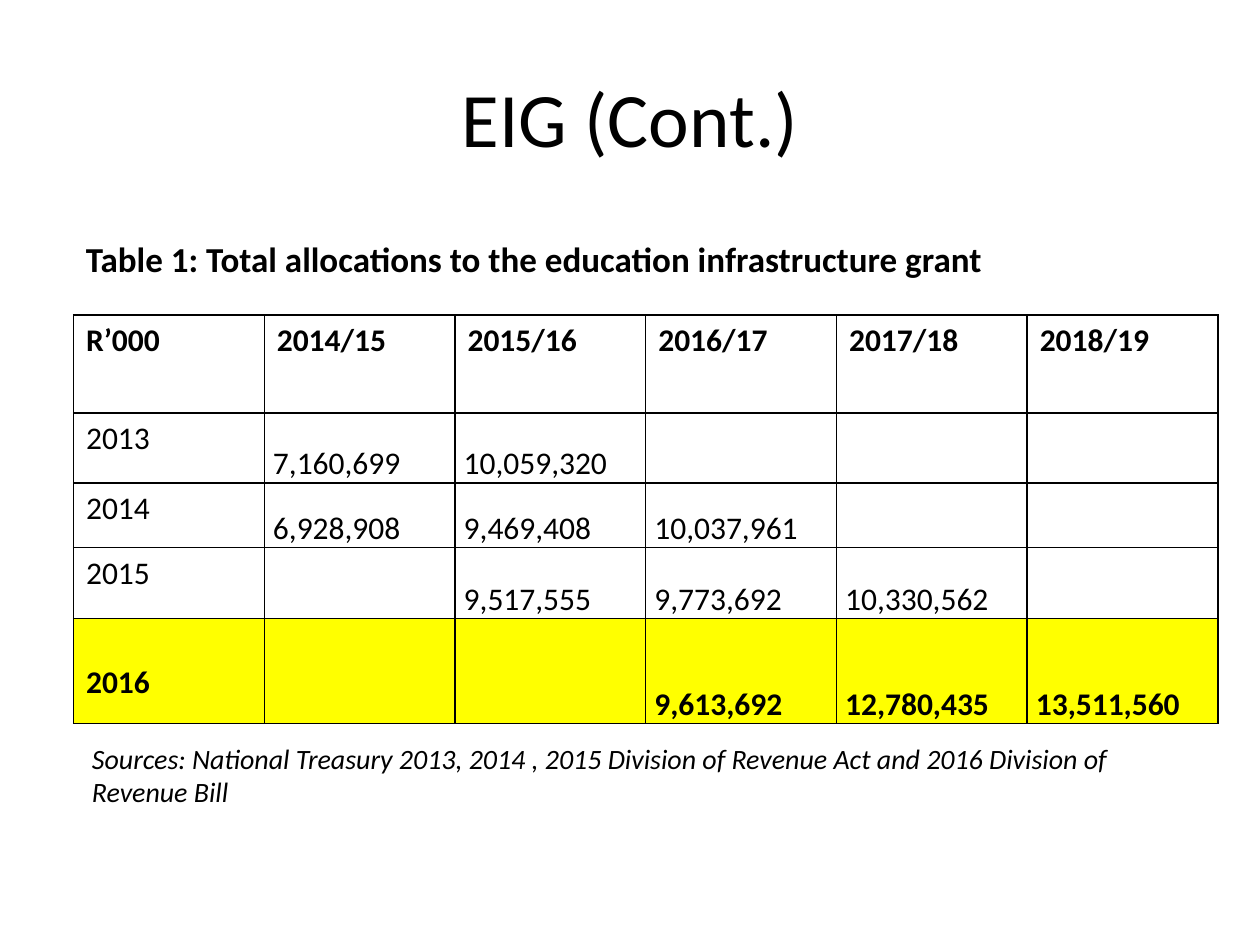
import dataclasses

import lxml.etree
import pptx
import pptx.dml.color
import pptx.enum.text
import pptx.oxml
import pptx.oxml.ns
import pptx.util

Pt = pptx.util.Pt
Anchor = pptx.enum.text.MSO_ANCHOR
Align = pptx.enum.text.PP_ALIGN

COLORS = {"text": "000000", "border": "000000", "plain": "FFFFFF", "highlight": "FFFF00"}
FONT = "Calibri"
TABLE_LEFT, TABLE_TOP, COLUMN_WIDTH = 42, 180, 109
HEADERS = ["R’000", "2014/15", "2015/16", "2016/17", "2017/18", "2018/19"]


@dataclasses.dataclass
class Row:
    height: float
    cells: list[str]
    fill: str = "plain"
    bold: bool = False
    label_top: float = 3.6


@dataclasses.dataclass
class Caption:
    text: str
    left: float
    top: float
    width: float
    height: float
    size: float
    anchor: Anchor
    bold: bool = False
    italic: bool = False


ROWS = [
    Row(56, HEADERS, bold=True),
    Row(40, ["2013", "7,160,699", "10,059,320", "", "", ""]),
    Row(37, ["2014", "6,928,908", "9,469,408", "10,037,961", "", ""]),
    Row(40.5, ["2015", "", "9,517,555", "9,773,692", "10,330,562", ""]),
    Row(60, ["2016", "", "", "9,613,692", "12,780,435", "13,511,560"],
        fill="highlight", bold=True, label_top=25.6),
]
CAPTIONS = [
    Caption("Table 1: Total allocations to the education infrastructure grant",
            42, 132, 600, 31.5, 20, Anchor.MIDDLE, bold=True),
    Caption("Sources: National Treasury 2013, 2014 , 2015 Division of Revenue Act "
            "and 2016 Division of Revenue Bill",
            45.5, 420, 606, 46, 16, Anchor.TOP, italic=True),
]


def color(name: str) -> pptx.dml.color.RGBColor:
    return pptx.dml.color.RGBColor.from_string(COLORS[name])


def format_text(text_frame, size: float, bold: bool = False, italic: bool = False) -> None:
    for paragraph in text_frame.paragraphs:
        for run in paragraph.runs:
            run.font.name = FONT
            run.font.size = Pt(size)
            run.font.bold = bold
            run.font.italic = italic
            run.font.color.rgb = color("text")


def add_title(slide, text: str) -> None:
    title = slide.shapes.title
    title.left, title.top, title.width, title.height = Pt(36), Pt(21.6), Pt(648), Pt(90)
    title.text_frame.text = text
    title.text_frame.vertical_anchor = Anchor.MIDDLE
    title.text_frame.paragraphs[0].alignment = Align.CENTER
    format_text(title.text_frame, 44)


def add_caption(slide, caption: Caption) -> None:
    shape = slide.shapes.add_textbox(
        Pt(caption.left), Pt(caption.top), Pt(caption.width), Pt(caption.height))
    shape.text_frame.word_wrap = True
    shape.text_frame.vertical_anchor = caption.anchor
    shape.text_frame.text = caption.text
    format_text(shape.text_frame, caption.size, caption.bold, caption.italic)


def add_borders(cell) -> None:
    properties = cell._tc.get_or_add_tcPr()
    for position, side in enumerate(("lnL", "lnR", "lnT", "lnB")):
        line = pptx.oxml.parse_xml(
            f'<a:{side} {pptx.oxml.ns.nsdecls("a")} w="{Pt(1)}"><a:solidFill>'
            f'<a:srgbClr val="{COLORS["border"]}"/></a:solidFill></a:{side}>')
        properties.insert(position, line)


def fill_cell(cell, text: str, row: Row, is_amount: bool) -> None:
    cell.fill.solid()
    cell.fill.fore_color.rgb = color(row.fill)
    add_borders(cell)
    cell.text_frame.text = text
    if is_amount:
        cell.vertical_anchor = Anchor.BOTTOM
        cell.margin_left = cell.margin_right = Pt(5)
        cell.margin_top = cell.margin_bottom = Pt(0)
        cell.text_frame.paragraphs[0].line_spacing = 1.15
        cell.text_frame.paragraphs[0].space_after = Pt(10)
    else:
        cell.margin_top = Pt(row.label_top)
    format_text(cell.text_frame, 18, row.bold)


def add_allocations(slide) -> None:
    shape = slide.shapes.add_table(
        len(ROWS), len(HEADERS), Pt(TABLE_LEFT), Pt(TABLE_TOP),
        Pt(COLUMN_WIDTH * len(HEADERS)), Pt(sum(row.height for row in ROWS)))
    table = shape.table
    for column in table.columns:
        column.width = Pt(COLUMN_WIDTH)
    for row_index, row in enumerate(ROWS):
        table.rows[row_index].height = Pt(row.height)
        for column_index, text in enumerate(row.cells):
            is_amount = row_index > 0 and column_index > 0 and text != ""
            fill_cell(table.cell(row_index, column_index), text, row, is_amount)


def main() -> None:
    presentation = pptx.Presentation()
    presentation.slide_width, presentation.slide_height = Pt(720), Pt(540)
    slide = presentation.slides.add_slide(presentation.slide_layouts.get_by_name("Title Only"))
    add_title(slide, "EIG (Cont.)")
    add_allocations(slide)
    for caption in CAPTIONS:
        add_caption(slide, caption)
    presentation.save("out.pptx")


if __name__ == "__main__":
    main()
